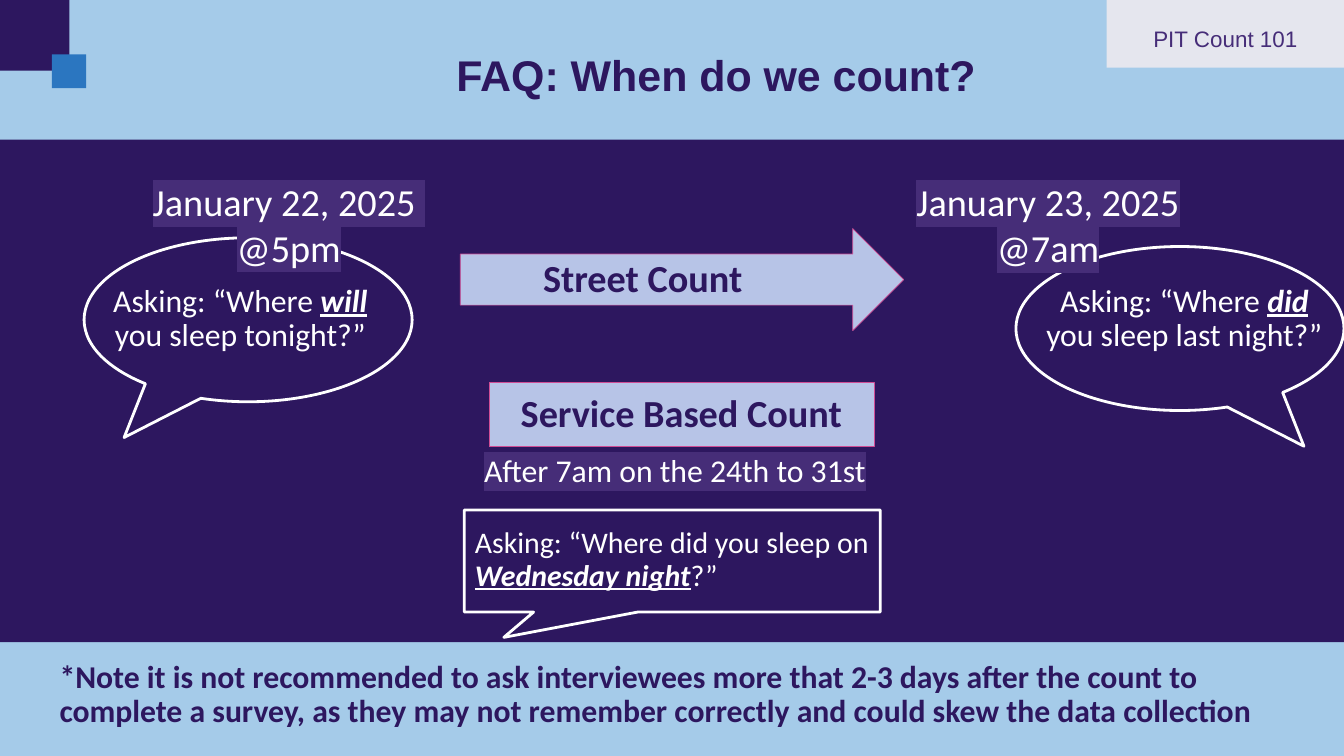
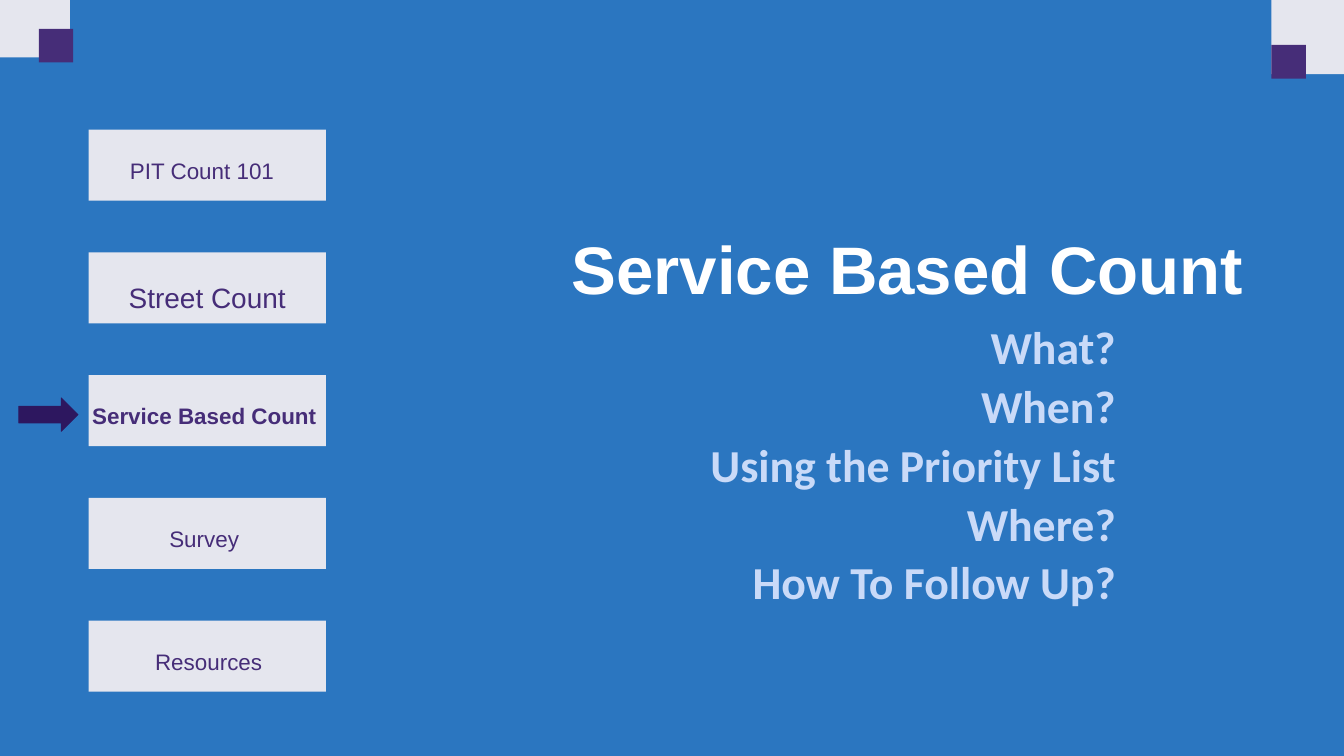
import lxml.etree
import pptx
import pptx.dml.color
import pptx.enum.shapes
import pptx.enum.text
import pptx.oxml.ns
import pptx.util

Cm = pptx.util.Cm
Pt = pptx.util.Pt
SHAPES = pptx.enum.shapes.MSO_SHAPE
ALIGN = pptx.enum.text.PP_ALIGN

INDIGO = "2D175F"
PURPLE = "462D78"
BLUE = "2B76C0"
SKY = "A5CBE9"
MIST = "E5E6EE"
LAVENDER = "C9DAF8"
PINK = "D04D95"
WHITE = "FFFFFF"

TAB_SIZE = (8.97, 2.69)
CORNER_SIZE = (2.87, 2.8)
ACCENT_SIZE = (1.3, 1.27)
BUBBLE_SIZE = (12.4, 6.2)
QUESTION_SIZE = (12.07, 3.12)

HEADING = {"font": "Arial", "bold": True, "inset": (0, 0), "spacing": 1.2}
LABEL = {"size": 24, "color": PURPLE, "font": "Arial", "align": ALIGN.CENTER,
         "inset": (0, 0), "spacing": 1.2}
COUNT_NAME = {"size": 41, "color": INDIGO, "bold": True, "align": ALIGN.CENTER}
DATE = {"size": 41, "highlight": PURPLE, "align": ALIGN.CENTER}
BODY = {"size": 34, "indent": 0.3, "spacing": 0.9, "before": 7.5}


def rgb(color):
    """Return the colour object for a hex string."""
    return pptx.dml.color.RGBColor.from_string(color)


def tag(name):
    """Return the qualified name of a DrawingML element."""
    return pptx.oxml.ns.qn("a:" + name)


def add_slide(presentation, background):
    """Add a blank slide with a plain background."""
    slide = presentation.slides.add_slide(presentation.slide_layouts[6])
    slide.background.fill.solid()
    slide.background.fill.fore_color.rgb = rgb(background)
    return slide


def add_shape(slide, kind, box, fill=None, line=None, width=0.75, opacity=100, adjustments=()):
    """Add a preset shape; box is left, top, width and height in centimetres."""
    shape = slide.shapes.add_shape(kind, *map(Cm, box))
    shape.shadow.inherit = False
    for index, value in enumerate(adjustments):
        shape.adjustments[index] = value
    if fill:
        shape.fill.solid()
        shape.fill.fore_color.rgb = rgb(fill)
        if opacity < 100:
            color = shape.fill._xPr.find(tag("solidFill"))[0]
            lxml.etree.SubElement(color, tag("alpha")).set("val", str(opacity * 1000))
    else:
        shape.fill.background()
    if line:
        shape.line.color.rgb = rgb(line)
        shape.line.width = Pt(width)
    else:
        shape.line.fill.background()
    return shape


def add_block(slide, box, fill):
    """Add a plain rectangle without an outline."""
    return add_shape(slide, SHAPES.RECTANGLE, box, fill)


def add_corner(slide, corner, accent, corner_fill, accent_fill):
    """Add a corner block with a small accent square at the given positions."""
    add_block(slide, corner + CORNER_SIZE, corner_fill)
    add_block(slide, accent + ACCENT_SIZE, accent_fill)


def add_callout(slide, kind, box, pointer):
    """Add a white outlined speech bubble."""
    return add_shape(slide, kind, box, line=WHITE, width=3, adjustments=pointer)


def highlight_run(run, color):
    """Put a highlight colour behind a run."""
    highlight = lxml.etree.Element(tag("highlight"))
    lxml.etree.SubElement(highlight, tag("srgbClr")).set("val", color)
    run._r.rPr.find(tag("solidFill")).addnext(highlight)


def add_text(slide, box, paragraphs, size, color=WHITE, font="Calibri", bold=False,
             align=ALIGN.LEFT, inset=(0.25, 0.25), indent=0, spacing=1.0, before=0,
             highlight=None):
    """Add paragraphs, each a list of runs whose odd ones are emphasised."""
    frame = slide.shapes.add_textbox(*map(Cm, box)).text_frame
    frame.word_wrap = True
    frame.margin_left = frame.margin_right = Cm(inset[0])
    frame.margin_top = frame.margin_bottom = Cm(inset[1])
    for number, texts in enumerate(paragraphs):
        paragraph = frame.add_paragraph() if number else frame.paragraphs[0]
        paragraph.alignment = align
        paragraph.line_spacing = spacing
        paragraph.space_before = Pt(before)
        if indent:
            properties = paragraph._p.get_or_add_pPr()
            properties.set("marL", str(int(Cm(indent))))
            properties.set("indent", "0")
        for index, text in enumerate(texts):
            emphasised = index % 2 == 1
            run = paragraph.add_run()
            run.text = text
            run.font.name = font
            run.font.size = Pt(size)
            run.font.color.rgb = rgb(color)
            run.font.bold = bold or emphasised
            run.font.italic = run.font.underline = emphasised
            if highlight:
                highlight_run(run, highlight)


def add_question(slide, bubble, pointer, position, question):
    """Add an oval speech bubble with its question."""
    add_callout(slide, SHAPES.OVAL_CALLOUT, bubble + BUBBLE_SIZE, pointer)
    add_text(slide, position + QUESTION_SIZE, [question], align=ALIGN.CENTER, **BODY)


def build_when_slide(presentation):
    """Build the slide on when the counts take place."""
    slide = add_slide(presentation, SKY)
    add_block(slide, (0, 5.28, 50.8, 19), INDIGO)
    add_corner(slide, (-0.25, -0.13), (1.96, 2.06), INDIGO, BLUE)
    add_block(slide, (41.83, -0.13) + TAB_SIZE, MIST)
    add_text(slide, (41.83, 0.74, 8.97, 1.02), [["PIT Count 101"]], **LABEL)
    add_text(slide, (17.25, 1.45, 19.89, 2.97), [["FAQ: When do we count?"]],
             size=46, color=INDIGO, **HEADING)

    count_style = {"fill": LAVENDER, "line": PINK, "opacity": 89}
    add_shape(slide, SHAPES.RIGHT_ARROW, (17.4, 8.64, 16.76, 3.86), **count_style)
    add_text(slide, (19.13, 9.35, 10.34, 2.26), [["Street Count"]], **COUNT_NAME)
    add_shape(slide, SHAPES.RECTANGLE, (18.49, 14.45, 14.55, 2.44), **count_style)
    add_text(slide, (18.87, 14.45, 13.79, 2.26), [["Service Based Count"]], **COUNT_NAME)
    add_text(slide, (17.75, 16.94, 15.72, 1.83), [["After 7am on the 24th to 31st"]],
             highlight=PURPLE, **BODY)

    add_callout(slide, SHAPES.RECTANGULAR_CALLOUT, (17.55, 19.28, 15.72, 3.86), (-0.405, 0.748))
    add_text(slide, (17.4, 19.71, 16.76, 2.97),
             [["Asking: “Where did you sleep on ", "Wednesday night", "?”"]],
             **{**BODY, "size": 32})
    add_question(slide, (3.18, 8.99), (-0.378, 0.718), (2.9, 10.52),
                 ["Asking: “Where ", "will ", "you sleep tonight?”"])
    add_question(slide, (38.4, 9.32), (0.378, 0.718), (38.58, 10.52),
                 ["Asking: “Where ", "did ", "you sleep last night?”"])
    add_text(slide, (3.18, 6.48, 15.47, 4.01), [["January 22, 2025 "], ["@5pm"]], **DATE)
    add_text(slide, (33.58, 6.5, 12.07, 4.01), [["January 23, 2025"], ["@7am"]], **DATE)

    note = ("*Note it is not recommended to ask interviewees more that 2-3 days after the count to "
            "complete a survey, as they may not remember correctly and could skew the data collection")
    add_text(slide, (1.7, 24.74, 47.4, 3.4), [[note]], color=INDIGO, bold=True, **BODY)


def build_section_slide(presentation):
    """Build the section slide with its menu and list of topics."""
    slide = add_slide(presentation, BLUE)
    add_corner(slide, (-0.23, -0.63), (1.47, 1.09), MIST, PURPLE)
    add_corner(slide, (48.06, 0), (48.06, 1.7), MIST, PURPLE)

    menu = [("PIT Count 101", 3.15, {}),
            ("Street Count", 3.35, {"size": 30}),
            ("Service Based Count ", 3.35, {"bold": True}),
            ("Survey ", 3.35, {}),
            ("Resources", 3.4, {})]
    for index, (label, left, changes) in enumerate(menu):
        top = 4.9 + 4.64 * index
        add_block(slide, (3.35, top) + TAB_SIZE, MIST)
        add_text(slide, (left, top + 0.82, 8.97, 1.02), [[label]], **{**LABEL, **changes})
    add_shape(slide, SHAPES.RIGHT_ARROW, (0.71, 15.04, 2.24, 1.27), INDIGO, INDIGO)

    add_text(slide, (19.08, 7.98, 30.45, 3.68), [["Service Based Count"]],
             size=72, align=ALIGN.CENTER, **HEADING)
    topics = ["What?", "When?", "Using the Priority List", "Where?", "How To Follow Up?"]
    add_text(slide, (25.2, 12.17, 17.22, 12.62), [[topic] for topic in topics], size=49,
             color=LAVENDER, bold=True, align=ALIGN.RIGHT, inset=(0.25, 0.13),
             spacing=0.9, before=10)


def main():
    """Build and save the presentation."""
    presentation = pptx.Presentation()
    presentation.slide_width = Cm(50.8)
    presentation.slide_height = Cm(28.58)
    build_when_slide(presentation)
    build_section_slide(presentation)
    presentation.save("out.pptx")


if __name__ == "__main__":
    main()
